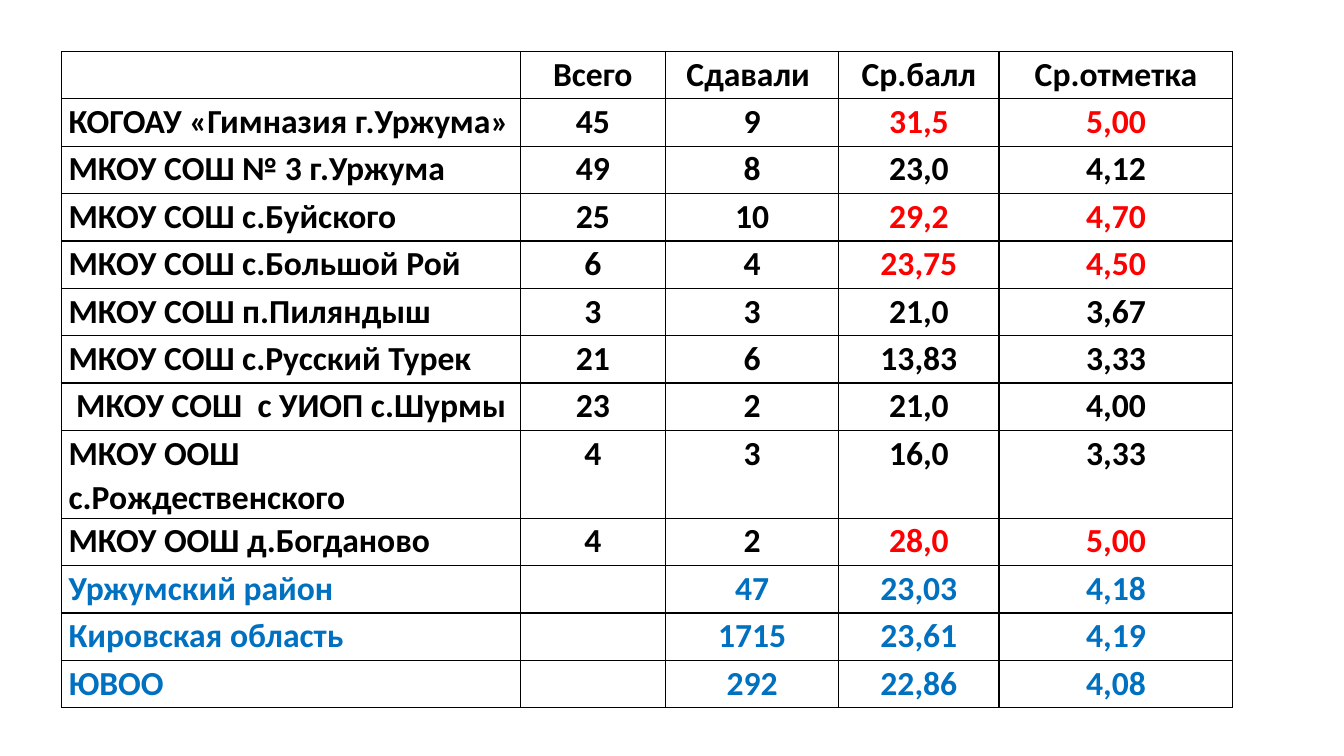
from dataclasses import dataclass

from lxml import etree
from pptx import Presentation
from pptx.dml.color import RGBColor
from pptx.enum.text import PP_ALIGN
from pptx.oxml.ns import qn
from pptx.util import Inches, Pt

LEFT, CENTER = PP_ALIGN.LEFT, PP_ALIGN.CENTER
WIDE, HIGH = Inches(13.33), Inches(7.5)


@dataclass(frozen=True)
class Theme:
    font: str = "Calibri"
    size: int = 24
    lead: float = 1.07
    ink: str = "000000"
    best: str = "FF0000"
    total: str = "0070C0"
    rule: int = 1


THEME = Theme()
COLS = (34.13, 10.8, 12.9, 11.93, 17.4)
ROW, TALL = 6.27, 11.6
HEAD = ("", "Всего", "Сдавали ", "Ср.балл", "Ср.отметка")
SCHOOLS = (
    ("КОГОАУ «Гимназия г.Уржума»", "45", "9", "31,5", "5,00"),
    ("МКОУ СОШ № 3 г.Уржума", "49", "8", "23,0", "4,12"),
    ("МКОУ СОШ с.Буйского", "25", "10", "29,2", "4,70"),
    ("МКОУ СОШ с.Большой Рой", "6", "4", "23,75", "4,50"),
    ("МКОУ СОШ п.Пиляндыш", "3", "3", "21,0", "3,67"),
    ("МКОУ СОШ с.Русский Турек", "21", "6", "13,83", "3,33"),
    (" МКОУ СОШ  с УИОП с.Шурмы", "23", "2", "21,0", "4,00"),
    ("МКОУ ООШ с.Рождественского", "4", "3", "16,0", "3,33"),
    ("МКОУ ООШ д.Богданово", "4", "2", "28,0", "5,00"),
)
TOTALS = (
    ("Уржумский район", "", "47", "23,03", "4,18"),
    ("Кировская область", "", "1715", "23,61", "4,19"),
    ("ЮВОО", "", "292", "22,86", "4,08"),
)
ROWS = (HEAD, *SCHOOLS, *TOTALS)
LONG = 8
BEST = {1, 3, 4, 9}
SCORE = 3


def across(share):
    return round(WIDE * share / 100)


def down(share):
    return round(HIGH * share / 100)


def tone(row, col):
    if row > len(SCHOOLS):
        return THEME.total
    return THEME.best if row in BEST and col >= SCORE else THEME.ink


def frame(cell):
    props = cell._tc.get_or_add_tcPr()
    for side in ("a:lnL", "a:lnR", "a:lnT", "a:lnB"):
        line = etree.SubElement(props, qn(side), w=str(Pt(THEME.rule)))
        fill = etree.SubElement(line, qn("a:solidFill"))
        etree.SubElement(fill, qn("a:srgbClr"), val=THEME.ink)
    cell.fill.background()


def write(cell, text, color, align):
    cell.margin_left = cell.margin_right = Inches(0.07)
    cell.margin_top = cell.margin_bottom = 0
    if not text:
        return
    para = cell.text_frame.paragraphs[0]
    para.alignment = align
    para.line_spacing = THEME.lead
    run = para.add_run()
    run.text = text
    run.font.name = THEME.font
    run.font.size = Pt(THEME.size)
    run.font.bold = True
    run.font.color.rgb = RGBColor.from_string(color)


def add_grid(slide):
    highs = [TALL if i == LONG else ROW for i in range(len(ROWS))]
    table = slide.shapes.add_table(
        len(ROWS), len(COLS), across(4.58), down(6.8),
        across(sum(COLS)), down(sum(highs))).table
    table.first_row = table.horz_banding = False
    for col, share in zip(table.columns, COLS):
        col.width = across(share)
    for row, share in zip(table.rows, highs):
        row.height = down(share)
    for i, texts in enumerate(ROWS):
        for j, text in enumerate(texts):
            cell = table.cell(i, j)
            frame(cell)
            write(cell, text, tone(i, j), CENTER if j else LEFT)


def main():
    deck = Presentation()
    deck.slide_width, deck.slide_height = WIDE, HIGH
    add_grid(deck.slides.add_slide(deck.slide_layouts[6]))
    deck.save("out.pptx")


if __name__ == "__main__":
    main()
